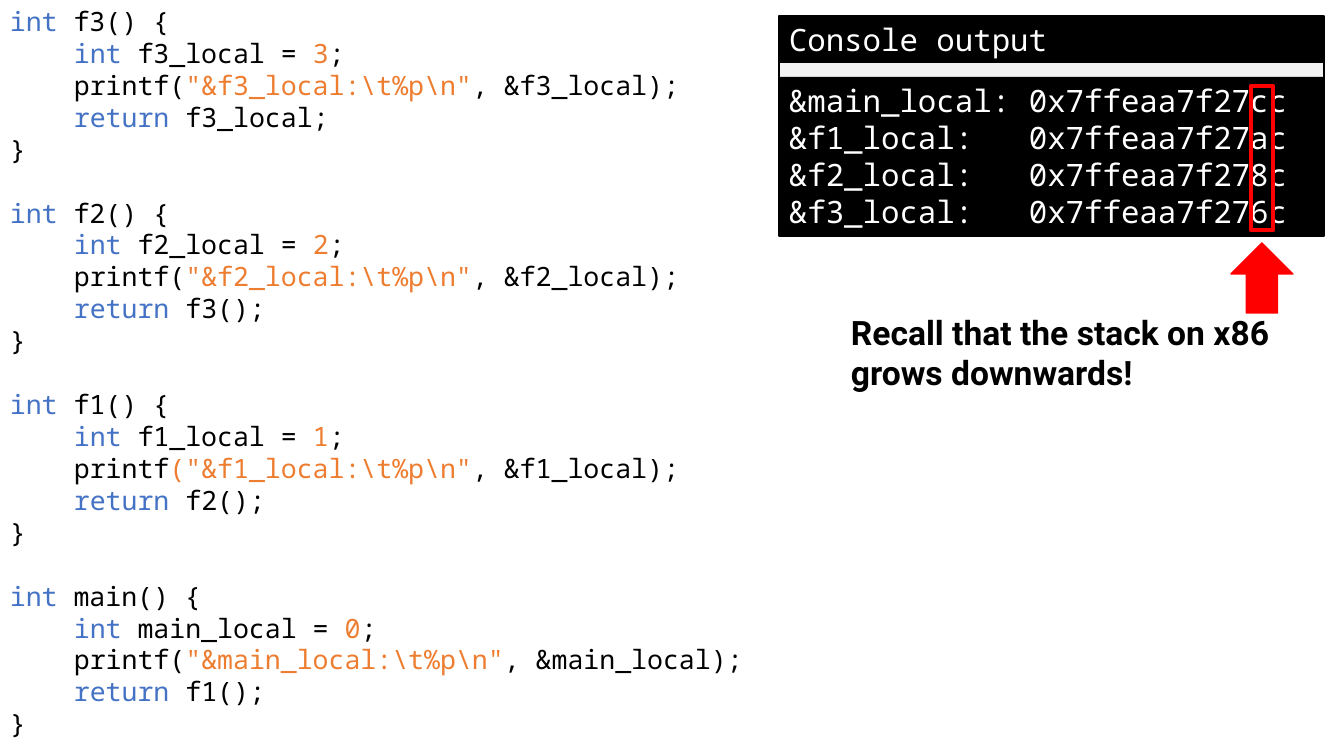
import pptx
import pptx.dml.color
import pptx.enum.shapes
import pptx.enum.text
import pptx.util

EMU_PER_PX = 914400 / 100.8
BLACK = pptx.dml.color.RGBColor(0x00, 0x00, 0x00)
WHITE = pptx.dml.color.RGBColor(0xFF, 0xFF, 0xFF)
GREY = pptx.dml.color.RGBColor(0xF2, 0xF2, 0xF2)
BLUE = pptx.dml.color.RGBColor(0x44, 0x72, 0xC4)
ORANGE = pptx.dml.color.RGBColor(0xED, 0x7D, 0x31)
RED = pptx.dml.color.RGBColor(0xFF, 0x00, 0x00)
MONO = "Noto Sans Mono"
CODE_SIZE = 19
CODE_INDENT = 64
CODE_GAP = 32
CONSOLE_SIZE = 22
SHAPES = pptx.enum.shapes.MSO_SHAPE

FUNCTIONS = [
    ("f3", "3", "f3_local", "("),
    ("f2", "2", "f3()", "("),
    ("f1", "1", "f2()", ""),
    ("main", "0", "f1()", "("),
]
ADDRESSES = [("main", "cc"), ("f1", "ac"), ("f2", "8c"), ("f3", "6c")]


def px(length):
    """Turn pixels into EMU."""
    return pptx.util.Emu(round(length * EMU_PER_PX))


def add_para(frame, spans, size, font=MONO, bold=False, indent=0, before=0):
    """Append one paragraph made of (text, colour) spans."""
    para = frame.paragraphs[0]
    if para.runs:
        para = frame.add_paragraph()
    para.alignment = pptx.enum.text.PP_ALIGN.LEFT
    para.space_before = px(before)
    properties = para._p.get_or_add_pPr()
    properties.set("marL", str(px(indent)))
    properties.set("indent", "0")
    for text, colour in spans:
        span = para.add_run()
        span.text = text
        span.font.name = font
        span.font.size = pptx.util.Pt(size)
        span.font.bold = bold
        span.font.color.rgb = colour


def add_text_box(page, left, top, width, height):
    """Add a wrapping text box and return its text frame."""
    box = page.shapes.add_textbox(px(left), px(top), px(width), px(height))
    box.text_frame.word_wrap = True
    return box.text_frame


def add_block(page, left, top, width, height, kind=SHAPES.RECTANGLE, fill=None, line=None, weight=1):
    """Add a flat preset shape, without fill or line where none is given."""
    block = page.shapes.add_shape(kind, px(left), px(top), px(width), px(height))
    block.shadow.inherit = False
    if fill is None:
        block.fill.background()
    else:
        block.fill.solid()
        block.fill.fore_color.rgb = fill
    if line is None:
        block.line.fill.background()
    else:
        block.line.color.rgb = line
        block.line.width = pptx.util.Pt(weight)
    block.text_frame.word_wrap = True
    block.text_frame.vertical_anchor = pptx.enum.text.MSO_ANCHOR.TOP
    return block


def add_code(page, left, top, width, height):
    """List the C functions with coloured keywords and literals."""
    frame = add_text_box(page, left, top, width, height)
    for index, (name, value, result, bracket) in enumerate(FUNCTIONS):
        local = f"{name}_local"
        literal = f'"&{local}:\\t%p\\n"'
        if not bracket:
            literal = "(" + literal
        body = [
            [("int", BLUE), (f" {local} = ", BLACK), (value, ORANGE), (";", BLACK)],
            [("printf" + bracket, BLACK), (literal, ORANGE), (f", &{local});", BLACK)],
            [("return", BLUE), (f" {result};", BLACK)],
        ]
        header = [("int", BLUE), (f" {name}() {{", BLACK)]
        add_para(frame, header, CODE_SIZE, before=CODE_GAP if index else 0)
        for spans in body:
            add_para(frame, spans, CODE_SIZE, indent=CODE_INDENT)
        add_para(frame, [("}", BLACK)], CODE_SIZE)


def add_console(page, left, top, width, height):
    """Draw the console with its title, addresses and marked digit column."""
    title_height, output_top, address_left = 47, 61, 240
    output_height = height - output_top
    add_block(page, left, top, width, height, fill=GREY, line=BLACK)
    output = add_block(page, left, top + output_top, width, output_height, fill=BLACK)
    addresses = add_text_box(
        page, left + address_left, top + output_top, width - address_left, output_height
    )
    for name, ending in ADDRESSES:
        add_para(output.text_frame, [(f"&{name}_local:", WHITE)], CONSOLE_SIZE)
        add_para(addresses, [(f"0x7ffeaa7f27{ending}", WHITE)], CONSOLE_SIZE)
    title = add_block(page, left, top, width, title_height, fill=BLACK)
    add_para(title.text_frame, [("Console output", WHITE)], CONSOLE_SIZE)
    add_block(page, left + 472, top + 70, 22, 144, line=RED, weight=3)


def add_callout(page, left, top, width, height):
    """Place the remark and the arrow that rises from it."""
    frame = add_text_box(page, left, top, width, height)
    remark = "Recall that the stack on x86 grows downwards!"
    add_para(frame, [(remark, BLACK)], 24, font="Roboto", bold=True)
    arrow = add_block(page, left + 386, top - 60, 70, 62, kind=SHAPES.RIGHT_ARROW, fill=RED, line=RED)
    arrow.rotation = 270


def main():
    """Build the slide and save it."""
    deck = pptx.Presentation()
    deck.slide_width, deck.slide_height = px(1344), px(756)
    page = deck.slides.add_slide(deck.slide_layouts[6])
    add_code(page, 0, 0, 891, 752)
    add_console(page, 779, 16, 545, 220)
    add_callout(page, 841, 307, 478, 92)
    deck.save("out.pptx")


if __name__ == "__main__":
    main()
